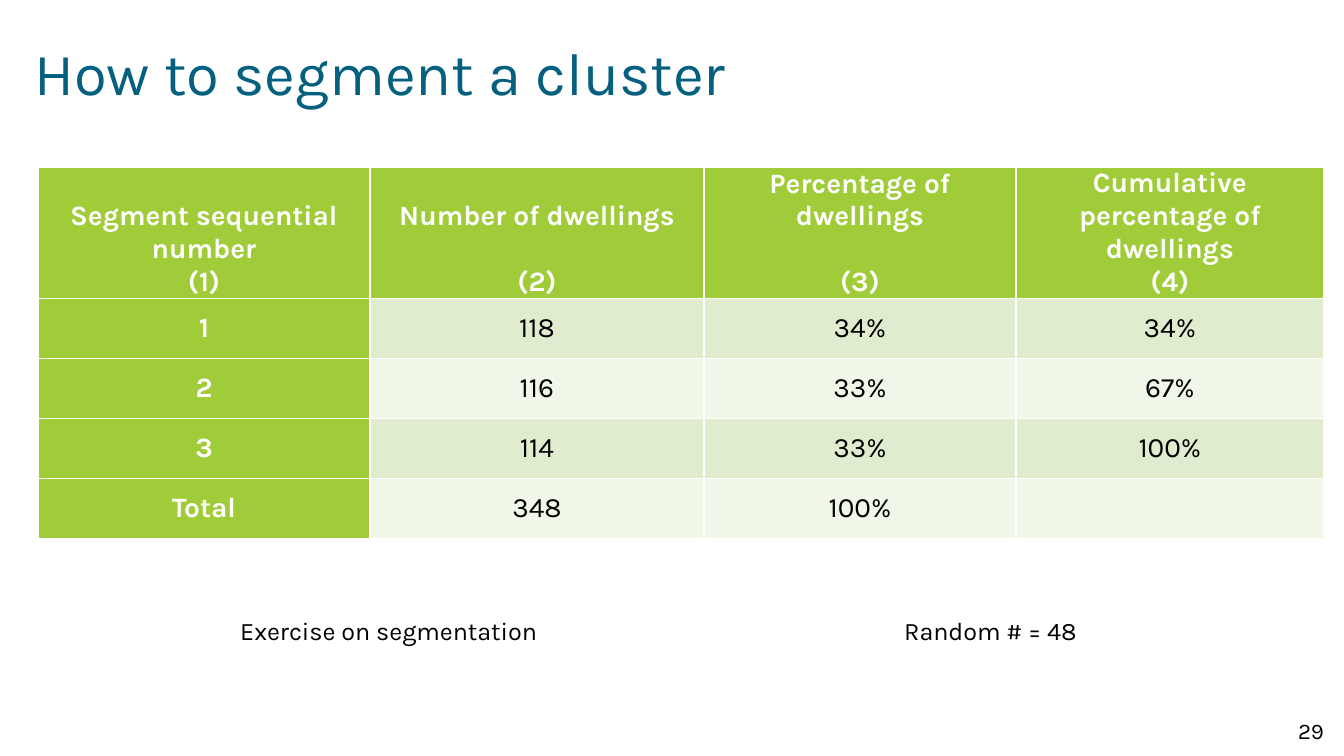
from pptx import Presentation
from pptx.dml.color import RGBColor
from pptx.enum.text import MSO_ANCHOR, PP_ALIGN
from pptx.util import Pt

TITLE = "How to segment a cluster"
HEADERS = ["Segment sequential number", "Number of dwellings",
           "Percentage of dwellings", "Cumulative percentage of dwellings"]
SPACED_HEADERS = (1, 2)  # columns with a line's gap above the number
ROWS = [
    ("1", "118", "34%", "34%"),
    ("2", "116", "33%", "67%"),
    ("3", "114", "33%", "100%"),
    ("Total", "348", "100%", ""),
]
NOTES = [("Exercise on segmentation", 227, 680), ("Random # = 48", 891, 243)]
PAGE = "29"

FONT = "Karla"
TEAL = RGBColor(0x04, 0x60, 0x7E)
GREEN = RGBColor(0xA1, 0xCC, 0x3A)
BANDS = [RGBColor(0xE0, 0xEC, 0xCE), RGBColor(0xF0, 0xF6, 0xE8)]
WHITE = RGBColor(0xFF, 0xFF, 0xFF)
BLACK = RGBColor(0, 0, 0)

COL_WIDTHS = [332, 334, 312, 308]
HEAD_H, ROW_H = 130, 60


def px(n):
    return round(n * 914400 / 134.4)


def write(tf, *lines, size, color=BLACK, bold=False, align=PP_ALIGN.LEFT,
          anchor=MSO_ANCHOR.TOP, gap=0):
    """Fill a text frame, one paragraph a line; gap is the space between them."""
    tf.word_wrap = True
    tf.vertical_anchor = anchor
    for i, line in enumerate(lines):
        p = tf.paragraphs[0] if i == 0 else tf.add_paragraph()
        p.alignment = align
        p.space_before = Pt(gap if i else 0)
        r = p.add_run()
        r.text = line
        r.font.name, r.font.size, r.font.bold = FONT, Pt(size), bold
        r.font.color.rgb = color


def fill_cell(cell, fill, *lines, **fmt):
    cell.fill.solid()
    cell.fill.fore_color.rgb = fill
    cell.margin_left = cell.margin_right = px(8)
    cell.margin_top = cell.margin_bottom = 0
    anchor = fmt.pop("anchor", MSO_ANCHOR.MIDDLE)
    cell.vertical_anchor = anchor
    write(cell.text_frame, *lines, size=15, align=PP_ALIGN.CENTER,
          anchor=anchor, **fmt)


def add_segment_table(s):
    table = s.shapes.add_table(len(ROWS) + 1, len(HEADERS), px(38), px(167),
                               px(sum(COL_WIDTHS)),
                               px(HEAD_H + ROW_H * len(ROWS))).table
    table.first_col = True
    for col, width in zip(table.columns, COL_WIDTHS):
        col.width = px(width)
    for i, row in enumerate(table.rows):
        row.height = px(ROW_H if i else HEAD_H)
    for c, header in enumerate(HEADERS):
        fill_cell(table.cell(0, c), GREEN, header, f"({c + 1})", color=WHITE,
                  bold=True, anchor=MSO_ANCHOR.BOTTOM,
                  gap=17.5 if c in SPACED_HEADERS else 0)
    for i, values in enumerate(ROWS):
        for c, value in enumerate(values):
            first = c == 0
            fill_cell(table.cell(i + 1, c), GREEN if first else BANDS[i % 2],
                      *([value] if value else []),
                      color=WHITE if first else BLACK, bold=first)


def main():
    prs = Presentation()
    prs.slide_width, prs.slide_height = px(1344), px(756)
    s = prs.slides.add_slide(prs.slide_layouts[5])

    title = s.shapes.title
    title.left, title.top, title.width, title.height = map(px, (21, 8, 1303, 127))
    write(title.text_frame, TITLE, size=32, color=TEAL, anchor=MSO_ANCHOR.MIDDLE)

    add_segment_table(s)

    for text, left, width in NOTES:
        box = s.shapes.add_textbox(px(left), px(609), px(width), px(44))
        write(box.text_frame, text, size=13.5)

    tf = s.shapes.add_textbox(px(1242), px(704), px(82), px(40)).text_frame
    tf.margin_left = tf.margin_right = tf.margin_top = tf.margin_bottom = 0
    write(tf, PAGE, size=12, align=PP_ALIGN.RIGHT, anchor=MSO_ANCHOR.BOTTOM)

    prs.save("out.pptx")


if __name__ == "__main__":
    main()
